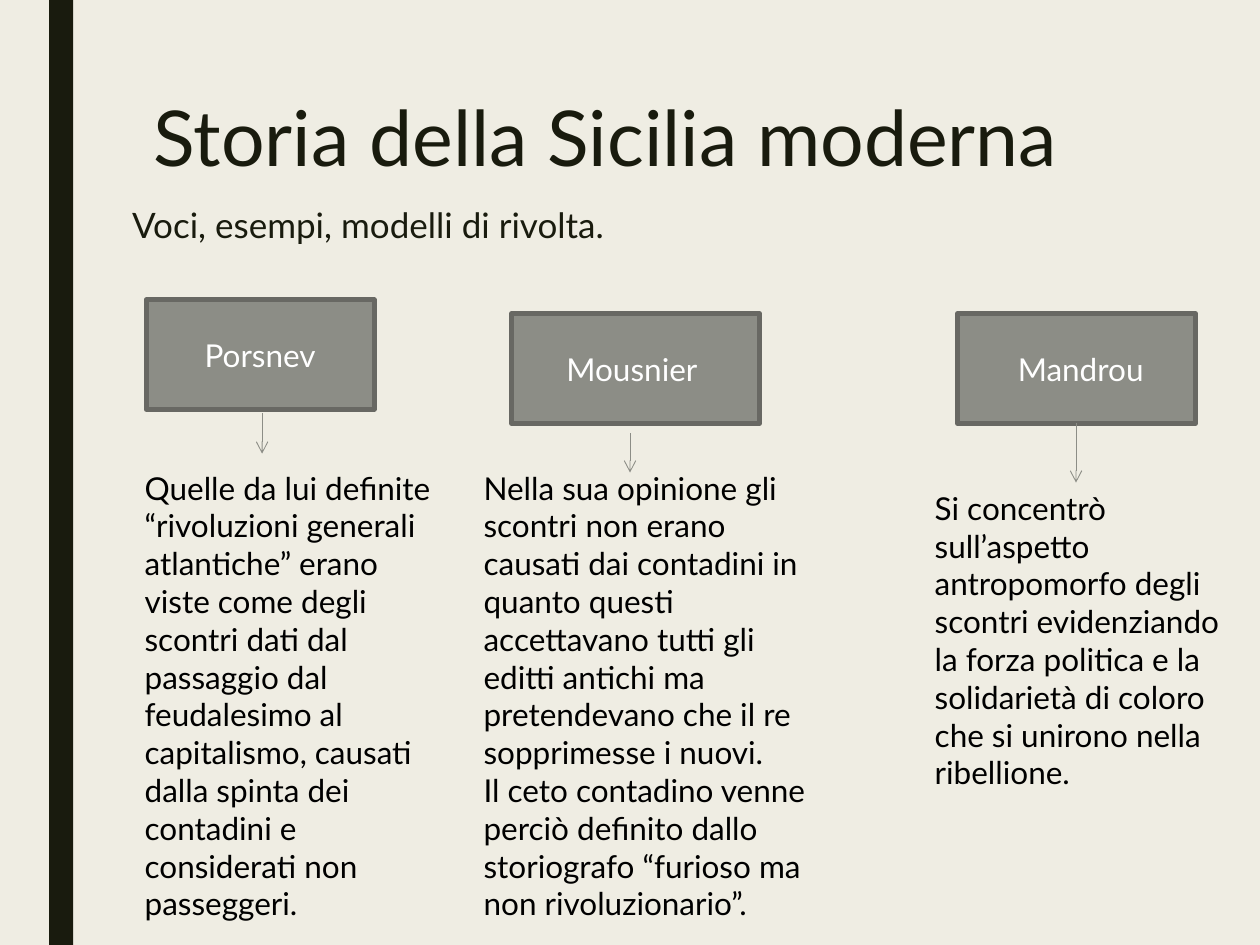
from dataclasses import dataclass
from lxml import etree
from pptx import Presentation
from pptx.dml.color import RGBColor
from pptx.enum.shapes import MSO_CONNECTOR, MSO_SHAPE
from pptx.enum.text import MSO_ANCHOR, MSO_AUTO_SIZE, PP_ALIGN
from pptx.oxml.ns import qn
from pptx.util import Inches, Pt

RECT = MSO_SHAPE.RECTANGLE
LINE = MSO_CONNECTOR.STRAIGHT
TOP, MIDDLE = MSO_ANCHOR.TOP, MSO_ANCHOR.MIDDLE
LEFT, CENTER = PP_ALIGN.LEFT, PP_ALIGN.CENTER
FIXED, GROW = MSO_AUTO_SIZE.NONE, MSO_AUTO_SIZE.SHAPE_TO_FIT_TEXT


@dataclass(frozen=True)
class Theme:
    font: str = "Lato"
    back: str = "EFEDE3"
    dark: str = "191B0E"
    box: str = "8C8D86"
    edge: str = "686863"
    light: str = "FFFFFF"
    ink: str = "000000"
    head: int = 44
    lead: int = 20
    text: int = 18


def apply(item, values):
    for name, value in values.items():
        setattr(item, name, value)


def color(code):
    return RGBColor.from_string(code)


class Deck:
    def __init__(self, theme):
        self.theme = theme
        self.file = Presentation()
        apply(self.file, {"slide_width": Inches(10), "slide_height": Inches(7.5)})
        self.slide = self.file.slides.add_slide(self.file.slide_layouts[5])
        self.paint(self.slide.background, theme.back)

    def paint(self, item, code):
        item.fill.solid()
        item.fill.fore_color.rgb = color(code)

    def label(self, shape, paras, size, code, frame=None, para=None):
        body = shape.text_frame
        base = {"word_wrap": True, "auto_size": FIXED, "vertical_anchor": TOP}
        apply(body, base | (frame or {}))
        body.text = "\n".join(paras)
        for item in body.paragraphs:
            apply(item, {"alignment": LEFT} | (para or {}))
            for run in item.runs:
                apply(run.font, {"name": self.theme.font, "size": Pt(size)})
                run.font.color.rgb = color(code)

    def title(self, text, *place):
        shape = self.slide.shapes.title
        names = ("left", "top", "width", "height")
        apply(shape, dict(zip(names, map(Inches, place))))
        self.label(shape, [text], self.theme.head, self.theme.dark,
                   para={"line_spacing": 0.89})

    def text(self, paras, size, code, *place, **style):
        shape = self.slide.shapes.add_textbox(*map(Inches, place))
        self.label(shape, paras, size, code, **style)

    def rect(self, code, *place):
        shape = self.slide.shapes.add_shape(RECT, *map(Inches, place))
        shape.shadow.inherit = False
        self.paint(shape, code)
        shape.line.fill.background()
        return shape

    def box(self, name, *place):
        shape = self.rect(self.theme.box, *place)
        shape.line.color.rgb = color(self.theme.edge)
        shape.line.width = Pt(2.75)
        self.label(shape, [name], self.theme.text, self.theme.light,
                   frame={"vertical_anchor": MIDDLE}, para={"alignment": CENTER})

    def arrow(self, x, top, end):
        link = self.slide.shapes.add_connector(
            LINE, *map(Inches, (x, top, x, end)))
        link.line.color.rgb = color(self.theme.box)
        link.line.width = Pt(0.5)
        props = link._element.spPr
        tail = etree.SubElement(props.find(qn("a:ln")), qn("a:tailEnd"))
        tail.set("type", "arrow")
        etree.SubElement(props, qn("a:effectLst"))


COLUMNS = [
    ("Porsnev", (1.16, 2.38, 1.81, 0.87), (2.08, 3.28, 3.6),
     (1.05, 3.67, 2.56, 3.13),
     ["Quelle da lui definite “rivoluzioni generali atlantiche” erano viste "
      "come degli scontri dati dal passaggio dal feudalesimo al capitalismo, "
      "causati dalla spinta dei contadini e considerati non passeggeri."]),
    ("Mousnier ", (4.06, 2.49, 1.97, 0.87), (5, 3.44, 3.75),
     (3.74, 3.67, 2.83, 3.43),
     ["Nella sua opinione gli scontri non erano causati dai contadini in "
      "quanto questi accettavano tutti gli editti antichi ma pretendevano "
      "che il re sopprimesse i nuovi.",
      "Il ceto contadino venne perciò definito dallo storiografo “furioso ma "
      "non rivoluzionario”."]),
    (" Mandrou", (7.6, 2.49, 1.89, 0.87), (8.54, 3.36, 3.83),
     (7.32, 3.83, 2.68, 2.22),
     ["Si concentrò sull’aspetto antropomorfo degli scontri evidenziando la "
      "forza politica e la solidarietà di coloro che si unirono nella "
      "ribellione."]),
]


def main():
    theme = Theme()
    deck = Deck(theme)
    deck.rect(theme.dark, 0.39, 0, 0.19, 7.5)
    deck.title("Storia della Sicilia moderna", 1.12, 0.75, 7.88, 1.62)
    deck.text(["Voci, esempi, modelli di rivolta."], theme.lead, theme.dark,
              0.95, 1.59, 7.88, 3.92, para={"line_spacing": 0.94})
    for name, box, arrow, place, paras in COLUMNS:
        deck.box(name, *box)
        deck.arrow(*arrow)
        deck.text(paras, theme.text, theme.ink, *place,
                  frame={"auto_size": GROW})
    deck.file.save("out.pptx")


if __name__ == "__main__":
    main()
